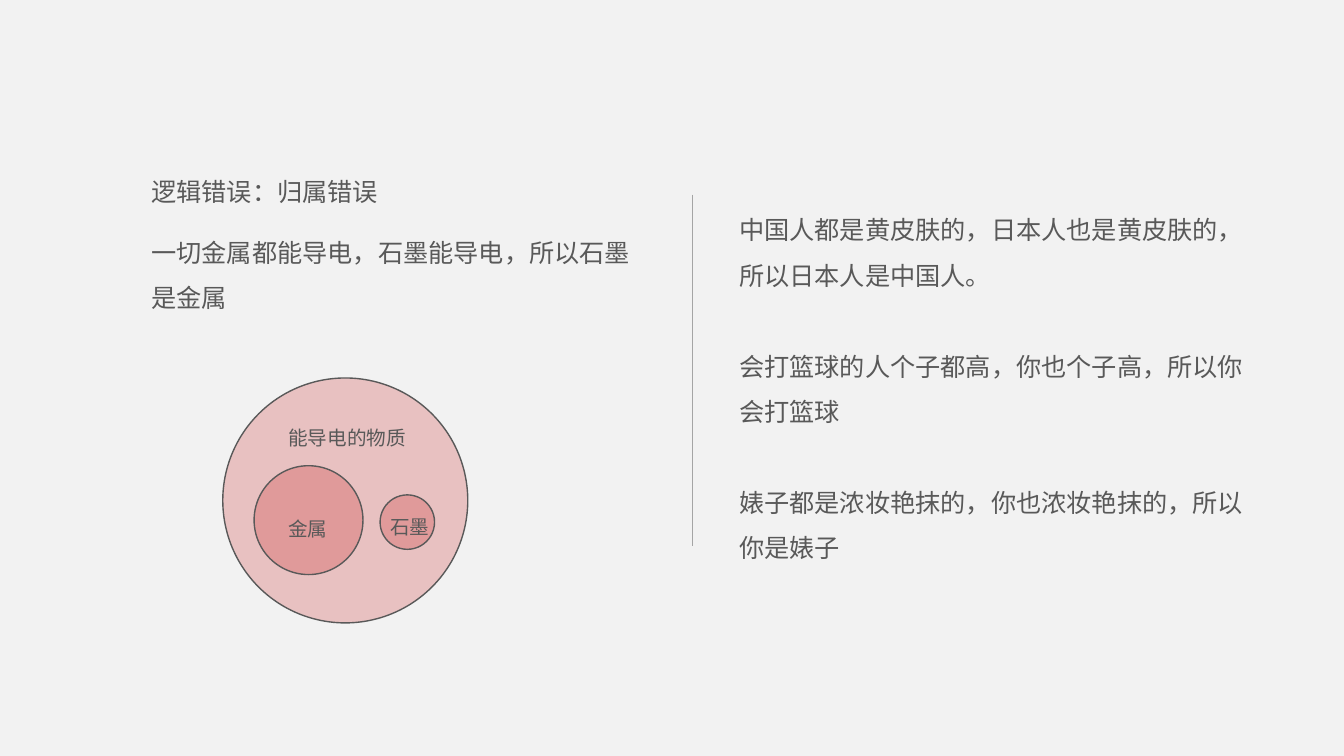
from pptx import Presentation
from pptx.dml.color import RGBColor
from pptx.enum.shapes import MSO_CONNECTOR as Connector, MSO_SHAPE as Shape
from pptx.enum.text import MSO_ANCHOR as Anchor, MSO_AUTO_SIZE as AutoSize, PP_ALIGN as Align
from pptx.oxml.ns import qn
from pptx.util import Inches, Pt
from lxml.etree import SubElement

# Content: lengths in inches
HEADING = ["逻辑错误：归属错误"]
CLAIM = ["一切金属都能导电，石墨能导电，所以石墨是金属"]
EXAMPLES = [
    "中国人都是黄皮肤的，日本人也是黄皮肤的，所以日本人是中国人。",
    "会打篮球的人个子都高，你也个子高，所以你会打篮球",
    "婊子都是浓妆艳抹的，你也浓妆艳抹的，所以你是婊子",
]
TEXT_AREAS = [  # paragraphs, (left, top, width, height)
    (HEADING, (1.4, 1.55, 2.47, 0.5)),
    (CLAIM, (1.4, 2.15, 5.08, 0.94)),
    (EXAMPLES, (7.23, 1.93, 5.28, 3.67)),
]
SETS = [  # left, top, diameter
    (2.21, 3.75, 2.43),
    (2.52, 4.62, 1.08),
    (3.77, 4.91, 0.54),
]
LABELS = [  # name, (left, top, width, height)
    ("能导电的物质", (2.76, 4.06, 1.91, 0.41)),
    ("金属", (2.76, 4.96, 0.86, 0.41)),
    ("石墨", (3.77, 4.94, 0.86, 0.41)),
]
DIVIDER = (6.87, 1.93, 6.87, 5.42)

THEME = {
    "font": "Noto Sans CJK SC",
    "background": RGBColor(0xF2, 0xF2, 0xF2),
    "ink": RGBColor(0x59, 0x59, 0x59),
    "set": RGBColor(0xC0, 0x00, 0x00),
    "set_alpha": 20,
    "divider": RGBColor(0xA5, 0xA5, 0xA5),
    "body_size": Pt(18),
    "label_size": Pt(14),
    "paragraph_gap": Pt(32.5),
}


def inches(values):
    return [Inches(value) for value in values]


def apply(target, values):
    for name, value in values.items():
        setattr(target, name, value)


def write(box, lines, size, wrap=True):
    frame = box.text_frame
    apply(frame, {"word_wrap": wrap, "auto_size": AutoSize.NONE, "vertical_anchor": Anchor.TOP})
    for index, line in enumerate(lines):
        para = frame.add_paragraph() if index else frame.paragraphs[0]
        apply(para, {
            "alignment": Align.LEFT,
            "line_spacing": 1.5,
            "space_before": THEME["paragraph_gap"] if index else Pt(0),
            "space_after": Pt(0),
        })
        properties = para._p.get_or_add_pPr()
        properties.set("marL", "0")
        properties.set("indent", "0")
        SubElement(properties, qn("a:buNone"))
        span = para.add_run()
        span.text = line
        apply(span.font, {"name": THEME["font"], "size": size})
        span.font.color.rgb = THEME["ink"]
        SubElement(span.font._element, qn("a:ea")).set("typeface", THEME["font"])


def add_set(page, left, top, diameter):
    circle = page.shapes.add_shape(Shape.OVAL, *inches((left, top, diameter, diameter)))
    circle.shadow.inherit = False
    circle.fill.solid()
    circle.fill.fore_color.rgb = THEME["set"]
    color = circle._element.spPr.find(qn("a:solidFill"))[0]
    SubElement(color, qn("a:alpha")).set("val", str(THEME["set_alpha"] * 1000))
    circle.line.color.rgb = THEME["ink"]
    circle.line.width = Pt(1)


def main():
    deck = Presentation()
    apply(deck, {"slide_width": Inches(13.33), "slide_height": Inches(7.5)})
    page = deck.slides.add_slide(deck.slide_layouts.get_by_name("Two Content"))
    page.background.fill.solid()
    page.background.fill.fore_color.rgb = THEME["background"]

    # Heading, claim and examples
    for box, (lines, area) in zip(page.placeholders, TEXT_AREAS):
        apply(box, dict(zip(("left", "top", "width", "height"), inches(area))))
        write(box, lines, THEME["body_size"], wrap=lines is not HEADING)

    # Nested sets and their names
    for circle in SETS:
        add_set(page, *circle)
    for name, area in LABELS:
        write(page.shapes.add_textbox(*inches(area)), [name], THEME["label_size"])

    # Divider between the columns
    divider = page.shapes.add_connector(Connector.STRAIGHT, *inches(DIVIDER))
    divider.line.color.rgb = THEME["divider"]
    divider.line.width = Pt(0.5)
    SubElement(divider._element.spPr, qn("a:effectLst"))

    deck.save("out.pptx")


if __name__ == "__main__":
    main()
